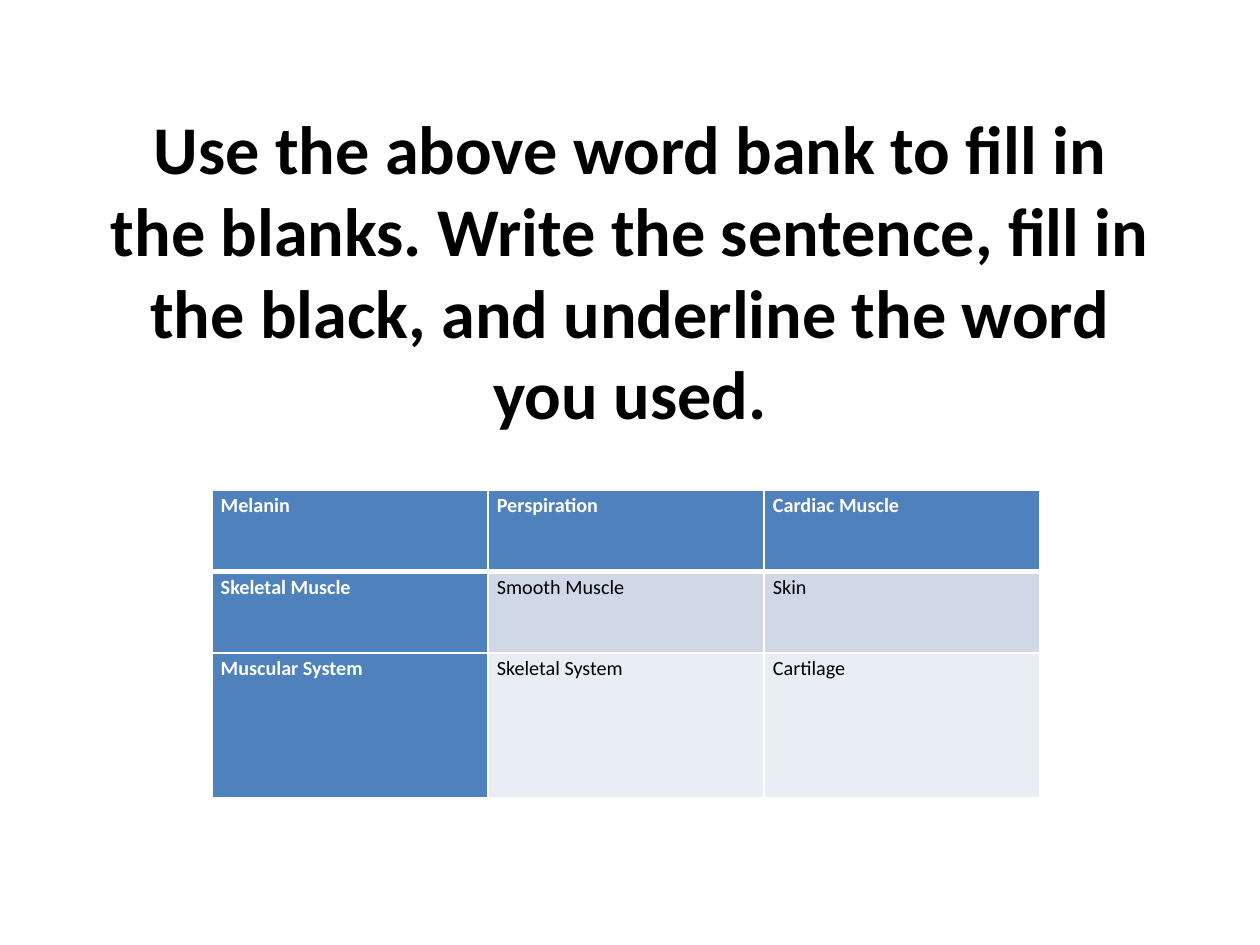
from lxml.etree import SubElement
from pptx import Presentation
from pptx.dml.color import RGBColor
from pptx.enum.text import MSO_ANCHOR, PP_ALIGN
from pptx.oxml.ns import qn
from pptx.util import Cm, Pt


def tint(code):
    return RGBColor.from_string(code)


class Page:
    face = "Calibri"
    white = "FFFFFF"
    black = "000000"
    blue = "4F81BD"
    bands = ["D0D8E8", "E9EDF4"]

    def __init__(self, deck):
        self.slide = deck.slides.add_slide(deck.slide_layouts[5])

    def style(self, para, size, color, bold):
        for run in para.runs:
            font = run.font
            font.name = self.face
            font.size = Pt(size)
            font.bold = bold
            font.color.rgb = tint(color)

    def title(self, text, left, top, width, height):
        shape = self.slide.shapes.title
        shape.left, shape.top = Cm(left), Cm(top)
        shape.width, shape.height = Cm(width), Cm(height)
        frame = shape.text_frame
        frame.text = text
        frame.word_wrap = True
        frame.vertical_anchor = MSO_ANCHOR.MIDDLE
        frame.margin_bottom = Cm(1.8)
        para = frame.paragraphs[0]
        para.alignment = PP_ALIGN.CENTER
        self.style(para, 39, self.black, True)

    def edge(self, cell, side, width):
        props = cell._tc.get_or_add_tcPr()
        line = SubElement(props, qn(f"a:ln{side}"), w=str(Pt(width)))
        fill = SubElement(line, qn("a:solidFill"))
        SubElement(fill, qn("a:srgbClr"), val=self.white)

    def cell(self, cell, text, row, col):
        head = row == 0 or col == 0
        cell.margin_left = cell.margin_right = Cm(0.18)
        cell.margin_top = cell.margin_bottom = 0
        for side in "LRTB":
            thick = (row, side) in [(0, "B"), (1, "T")]
            self.edge(cell, side, 3 if thick else 1)
        cell.fill.solid()
        cell.fill.fore_color.rgb = tint(self.blue if head else self.bands[row - 1])
        para = cell.text_frame.paragraphs[0]
        para.text = text
        para.line_spacing = 1.15
        self.style(para, 11.5, self.white if head else self.black, head)

    def table(self, words, left, top, width, heights):
        count = len(words[0])
        table = self.slide.shapes.add_table(
            len(words), count, Cm(left), Cm(top), Cm(width), Cm(sum(heights))
        ).table
        for col in table.columns:
            col.width = Cm(width / count)
        for row, height in enumerate(heights):
            table.rows[row].height = Cm(height)
            for col, text in enumerate(words[row]):
                self.cell(table.cell(row, col), text, row, col)


def main():
    deck = Presentation()
    deck.slide_width, deck.slide_height = Cm(25.4), Cm(19.05)
    page = Page(deck)
    page.title(
        "Use the above word bank to fill in the blanks. Write the sentence, "
        "fill in the black, and underline the word you used.",
        1.9, 2.54, 21.6, 7.47,
    )
    bank = [
        ["Melanin", "Perspiration", "Cardiac Muscle"],
        ["Skeletal Muscle", "Smooth Muscle", "Skin"],
        ["Muscular System", "Skeletal System", "Cartilage"],
    ]
    page.table(bank, 4.27, 9.88, 16.7, [1.64, 1.64, 2.92])
    deck.save("out.pptx")


if __name__ == "__main__":
    main()
